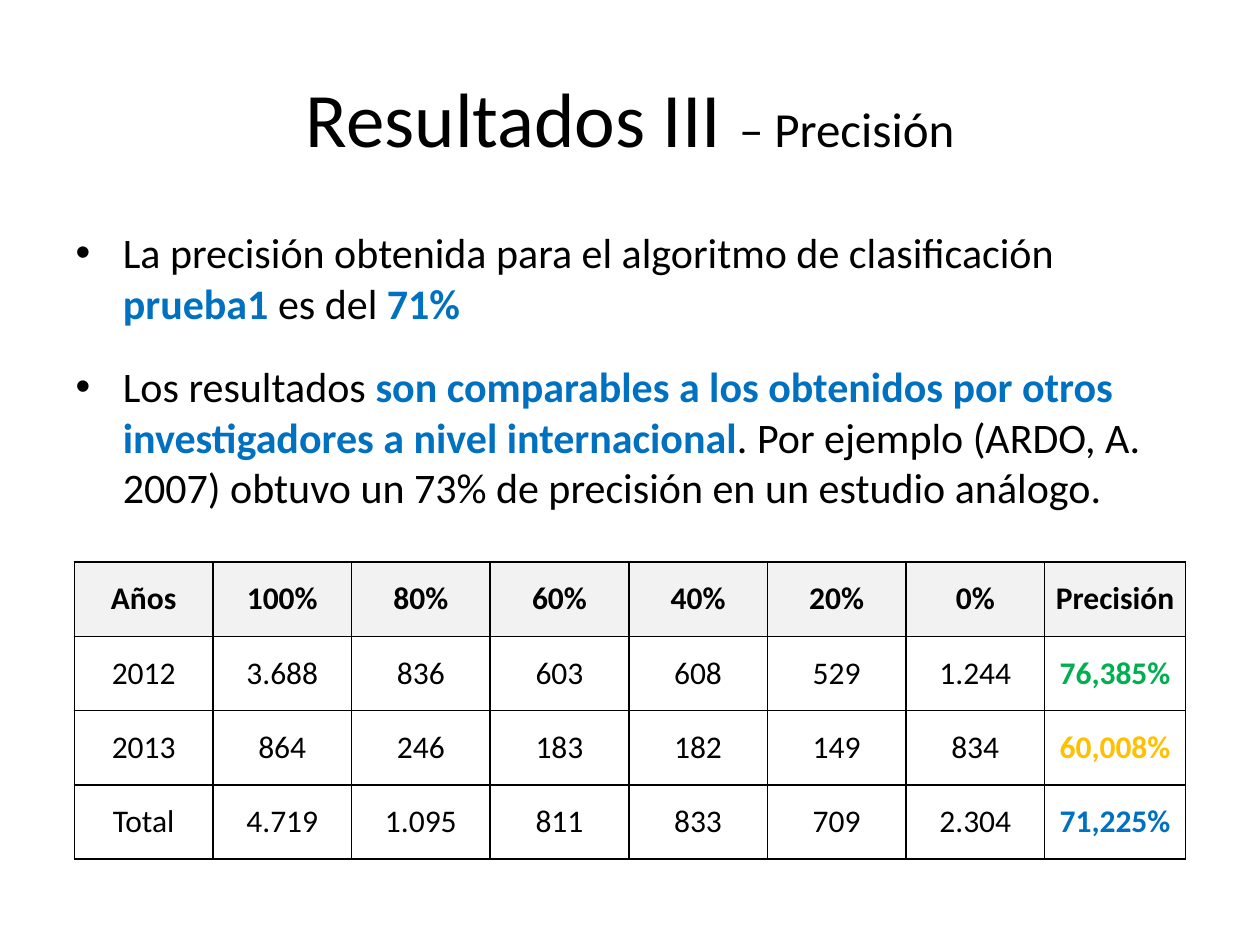
from lxml import etree
from pptx import Presentation
from pptx.dml.color import RGBColor
from pptx.enum.text import MSO_ANCHOR, PP_ALIGN
from pptx.oxml.ns import qn
from pptx.util import Inches, Pt

BLACK = RGBColor(0x00, 0x00, 0x00)
BLUE = RGBColor(0x00, 0x70, 0xC0)
GREEN = RGBColor(0x00, 0xB0, 0x50)
AMBER = RGBColor(0xFF, 0xC0, 0x00)
HEADER_GREY = RGBColor(0xF2, 0xF2, 0xF2)
FONT = "Calibri"

TITLE = [("Resultados III ", 44), ("– Precisión", 28)]
# Each bullet is a list of (text, emphasised)
BULLETS = [
    [("La precisión obtenida para el algoritmo de clasificación ", False),
     ("prueba1", True), (" es del ", False), ("71%", True)],
    [("Los resultados ", False),
     ("son comparables a los obtenidos por otros investigadores a nivel internacional", True),
     (". Por ejemplo (ARDO, A. 2007) obtuvo un 73% de precisión en un estudio análogo.", False)],
]
HEADER = ["Años", "100%", "80%", "60%", "40%", "20%", "0%", "Precisión"]
RESULTS = [
    ["2012", "3.688", "836", "603", "608", "529", "1.244", "76,385%"],
    ["2013", "864", "246", "183", "182", "149", "834", "60,008%"],
    ["Total", "4.719", "1.095", "811", "833", "709", "2.304", "71,225%"],
]
PRECISION_COLORS = [GREEN, AMBER, BLUE]

MARGIN = 0.5
TABLE_LEFT, TABLE_TOP = 0.59, 4.46
COLUMN_WIDTH, PRECISION_WIDTH, ROW_HEIGHT = 1.1, 1.12, 0.59


def place(shape, top, height):
    shape.left, shape.top = Inches(MARGIN), Inches(top)
    shape.width, shape.height = Inches(10 - 2 * MARGIN), Inches(height)


def style(font, size, color=BLACK, bold=False):
    font.name, font.size, font.bold = FONT, Pt(size), bold
    font.color.rgb = color


def add_borders(cell):
    properties = cell._tc.get_or_add_tcPr()
    for side in ("lnL", "lnR", "lnT", "lnB"):
        line = etree.SubElement(properties, qn(f"a:{side}"), w=str(Pt(1)))
        fill = etree.SubElement(line, qn("a:solidFill"))
        etree.SubElement(fill, qn("a:srgbClr"), val=str(BLACK))


def fill_cell(cell, text, color, bold, background):
    cell.vertical_anchor = MSO_ANCHOR.MIDDLE
    cell.margin_left = cell.margin_right = Inches(0.07)
    cell.margin_top = cell.margin_bottom = 0
    add_borders(cell)
    if background is None:
        cell.fill.background()
    else:
        cell.fill.solid()
        cell.fill.fore_color.rgb = background
    paragraph = cell.text_frame.paragraphs[0]
    paragraph.text = text
    paragraph.alignment = PP_ALIGN.CENTER
    style(paragraph.font, 18, color, bold)


def add_title(title):
    place(title, 0.3, 1.25)
    paragraph = title.text_frame.paragraphs[0]
    for text, size in TITLE:
        run = paragraph.add_run()
        run.text = text
        style(run.font, size)


def add_bullets(body):
    place(body, 1.75, 4.95)
    frame = body.text_frame
    for index, parts in enumerate(BULLETS):
        paragraph = frame.add_paragraph() if index else frame.paragraphs[0]
        if index:
            paragraph.space_before = Pt(19)
        for text, emphasised in parts:
            run = paragraph.add_run()
            run.text = text
            style(run.font, 24, BLUE if emphasised else BLACK, emphasised)


def add_results_table(slide):
    rows, last = [HEADER] + RESULTS, len(HEADER) - 1
    table = slide.shapes.add_table(
        len(rows), len(HEADER), Inches(TABLE_LEFT), Inches(TABLE_TOP),
        Inches(COLUMN_WIDTH * last + PRECISION_WIDTH), Inches(ROW_HEIGHT * len(rows))).table
    table.horz_banding = False
    for c, column in enumerate(table.columns):
        column.width = Inches(PRECISION_WIDTH if c == last else COLUMN_WIDTH)
    for r, values in enumerate(rows):
        table.rows[r].height = Inches(ROW_HEIGHT)
        for c, text in enumerate(values):
            is_header, is_precision = r == 0, c == last
            color = PRECISION_COLORS[r - 1] if is_precision and not is_header else BLACK
            fill_cell(table.cell(r, c), text, color, is_header or is_precision,
                      HEADER_GREY if is_header else None)


def main():
    presentation = Presentation()
    presentation.slide_width, presentation.slide_height = Inches(10), Inches(7.5)
    slide = presentation.slides.add_slide(presentation.slide_layouts[1])
    add_title(slide.shapes.title)
    add_bullets(slide.placeholders[1])
    add_results_table(slide)
    presentation.save("out.pptx")


if __name__ == "__main__":
    main()
